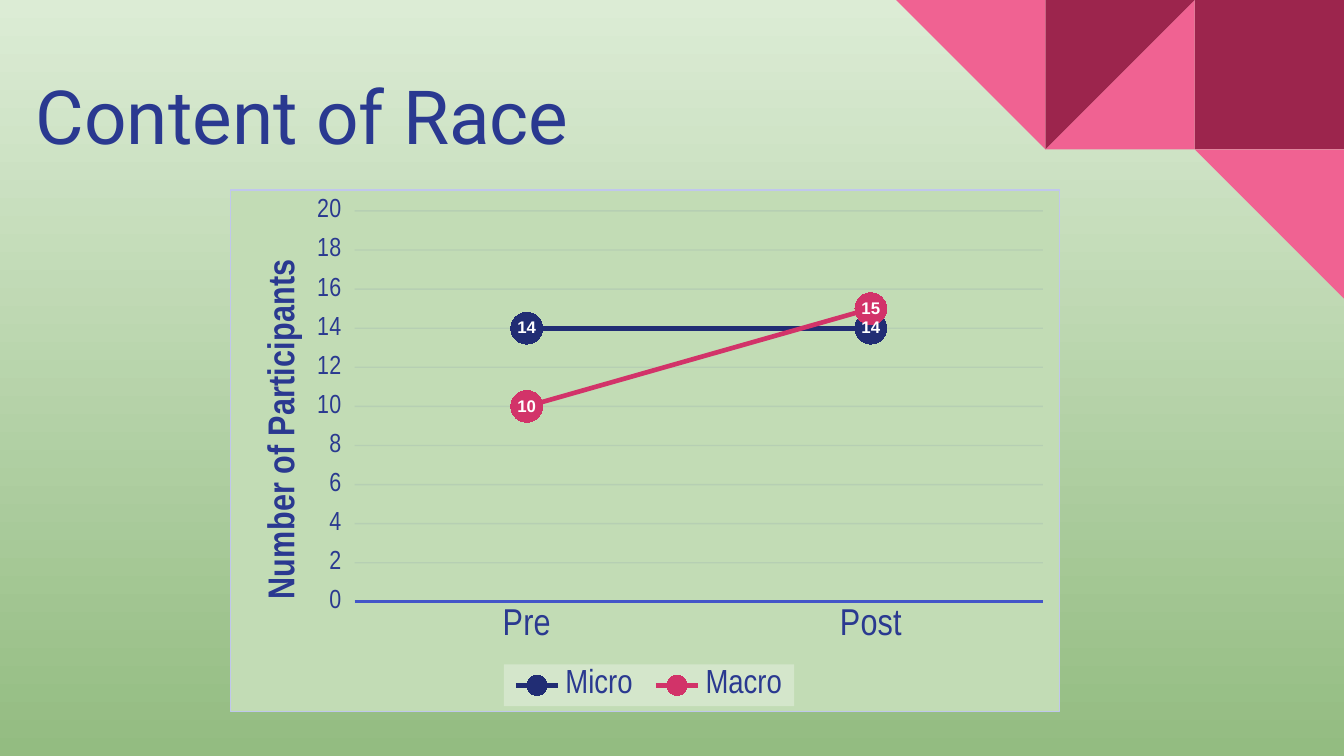
from lxml import etree
from pptx import Presentation
from pptx.chart.data import CategoryChartData
from pptx.dml.color import RGBColor
from pptx.enum.chart import (XL_CHART_TYPE, XL_LABEL_POSITION, XL_LEGEND_POSITION,
                             XL_MARKER_STYLE, XL_TICK_MARK)
from pptx.enum.shapes import MSO_SHAPE
from pptx.enum.text import MSO_ANCHOR, PP_ALIGN
from pptx.oxml import parse_xml
from pptx.oxml.ns import nsdecls, qn
from pptx.util import Pt

RECT, TRIANGLE = MSO_SHAPE.RECTANGLE, MSO_SHAPE.RIGHT_TRIANGLE
LINE_MARKERS, CIRCLE = XL_CHART_TYPE.LINE_MARKERS, XL_MARKER_STYLE.CIRCLE
BOTTOM, CENTER = XL_LEGEND_POSITION.BOTTOM, XL_LABEL_POSITION.CENTER
TICK_NONE, TICK_OUT = XL_TICK_MARK.NONE, XL_TICK_MARK.OUTSIDE
MIDDLE, LEFT = MSO_ANCHOR.MIDDLE, PP_ALIGN.LEFT

# Content
TITLE = "Content of Race"
AXIS_TITLE = "Number of Participants"
CATEGORIES = ["Pre", "Post"]
SERIES = [("Micro", (14, 14), "navy"), ("Macro", (10, 15), "rose")]

# Corner tiles: shape, column and row from the top right, rotation, colour
TILES = [
    (RECT, 1, 0, 0, "wine"),
    (TRIANGLE, 2, 0, 270, "pink"),
    (TRIANGLE, 2, 0, 90, "wine"),
    (TRIANGLE, 3, 0, 180, "pink"),
    (TRIANGLE, 1, 1, 180, "pink"),
]

THEME = {
    "color": {
        "text": "2A3990", "white": "FFFFFF", "top": "DCECD5", "base": "93BC81",
        "wine": "9C254D", "pink": "F06292", "navy": "212D74", "rose": "D23369",
        "panel": "C2DCB5", "border": "C0C7ED", "axis": "4356C8", "grid": "2E3E9D",
    },
    "font": {"title": "Roboto", "chart": "Arial", "axis": "Arial Narrow"},
    "size": {"title": 40, "axis": 20, "legend": 18, "value": 14, "chart": 10, "label": 9},
}
WIDTH, HEIGHT, TILE = 720, 405, 80


def rgb(name):
    return RGBColor.from_string(THEME["color"][name])


def style(font, size, face="axis", color="text", bold=False):
    font.size, font.name = Pt(THEME["size"][size]), THEME["font"][face]
    font.bold, font.color.rgb = bold, rgb(color)


def put_text(tf, text, align=None, spacing=None, **fmt):
    p = tf.paragraphs[0]
    p.alignment, p.line_spacing = align, spacing
    r = p.add_run()
    r.text = text
    style(r.font, **fmt)


def paint_line(line, color, width):
    line.color.rgb, line.width = rgb(color), Pt(width)


def set_layout(parent, index, **place):
    """Give a chart part a manual layout in fractions of the chart."""
    for old in parent.findall(qn("c:layout")):
        parent.remove(old)
    layout = parse_xml(f"<c:layout {nsdecls('c')}><c:manualLayout/></c:layout>")
    for tag, value in place.items():
        etree.SubElement(layout[0], qn(f"c:{tag}")).set("val", str(value))
    parent.insert(index, layout)


def fill_xml(color, alpha=100, line=None):
    border = ""
    if line:
        border = (f'<a:ln w="{Pt(0.75)}"><a:solidFill><a:srgbClr val="{THEME["color"][line]}"/>'
                  '</a:solidFill></a:ln>')
    return parse_xml(
        f'<c:spPr {nsdecls("c", "a")}><a:solidFill><a:srgbClr val="{THEME["color"][color]}">'
        f'<a:alpha val="{alpha * 1000}"/></a:srgbClr></a:solidFill>{border}</c:spPr>')


prs = Presentation()
prs.slide_width, prs.slide_height = Pt(WIDTH), Pt(HEIGHT)
s = prs.slides.add_slide(prs.slide_layouts[5])

# Background
bg = s.background.fill
bg.gradient()
bg.gradient_angle = 270
for stop, position, name in zip(bg.gradient_stops, (0, 1), ("top", "base")):
    stop.position, stop.color.rgb = position, rgb(name)

# Corner tiles
for kind, col, row, angle, color in TILES:
    sp = s.shapes.add_shape(kind, Pt(WIDTH - col * TILE), Pt(row * TILE), Pt(TILE), Pt(TILE))
    sp.rotation = angle
    sp.shadow.inherit = False
    sp.fill.solid()
    sp.fill.fore_color.rgb = rgb(color)
    sp.line.fill.background()

# Title
title = s.shapes.title
title.left, title.top, title.width, title.height = Pt(12), Pt(27.5), Pt(512), Pt(74)
tf = title.text_frame
tf.margin_left = tf.margin_right = tf.margin_top = tf.margin_bottom = Pt(7.2)
tf.vertical_anchor = MIDDLE
put_text(tf, TITLE, align=LEFT, spacing=0.9, size="title", face="title")

# Chart
data = CategoryChartData()
data.categories = CATEGORIES
for name, values, _ in SERIES:
    data.add_series(name, values)
chart = s.shapes.add_chart(LINE_MARKERS, Pt(123), Pt(101.5), Pt(445), Pt(280), data).chart
chart.has_title = False
style(chart.font, "chart", face="chart")
space = chart.element
space.find(qn("c:chart")).addnext(fill_xml("panel", line="border"))
set_layout(space.find(".//" + qn("c:plotArea")), 0, layoutTarget="inner", xMode="edge",
           yMode="edge", x=0.15, y=0.04, w=0.83, h=0.75)

# Series
plot = chart.plots[0]
plot.vary_by_categories = False
for series, (_, _, color) in zip(plot.series, SERIES):
    series.smooth = False
    paint_line(series.format.line, color, 2.5)
    marker = series.marker
    marker.style, marker.size = CIRCLE, 17
    marker.format.fill.solid()
    marker.format.fill.fore_color.rgb = rgb(color)
    paint_line(marker.format.line, color, 0.75)
    labels = series.data_labels
    labels.show_value, labels.position = True, CENTER
    style(labels.font, "label", face="chart", color="white", bold=True)

# Axes
cat, val = chart.category_axis, chart.value_axis
cat.major_tick_mark, val.major_tick_mark = TICK_NONE, TICK_OUT
style(cat.tick_labels.font, "axis")
style(val.tick_labels.font, "value")
paint_line(cat.format.line, "axis", 1.5)
val.format.line.fill.background()
val.minimum_scale, val.maximum_scale, val.major_unit = 0, 20, 2
grid = val.major_gridlines.format.line
paint_line(grid, "grid", 0.75)
grid_color = val.major_gridlines._xAx.find(".//" + qn("c:majorGridlines")).find(
    ".//" + qn("a:srgbClr"))
etree.SubElement(grid_color, qn("a:alpha")).set("val", "8000")
put_text(val.axis_title.text_frame, AXIS_TITLE, size="axis", bold=True)
set_layout(val.axis_title._element, 1, xMode="edge", yMode="edge", x=0.03, y=0.12)

# Legend
chart.has_legend = True
legend = chart.legend
legend.position, legend.include_in_layout = BOTTOM, False
style(legend.font, "legend")
box = legend._element
set_layout(box, 1, xMode="edge", yMode="edge", x=0.33, y=0.91, w=0.35, h=0.08)
box.find(qn("c:txPr")).addprevious(fill_xml("white", alpha=30))

prs.save("out.pptx")
